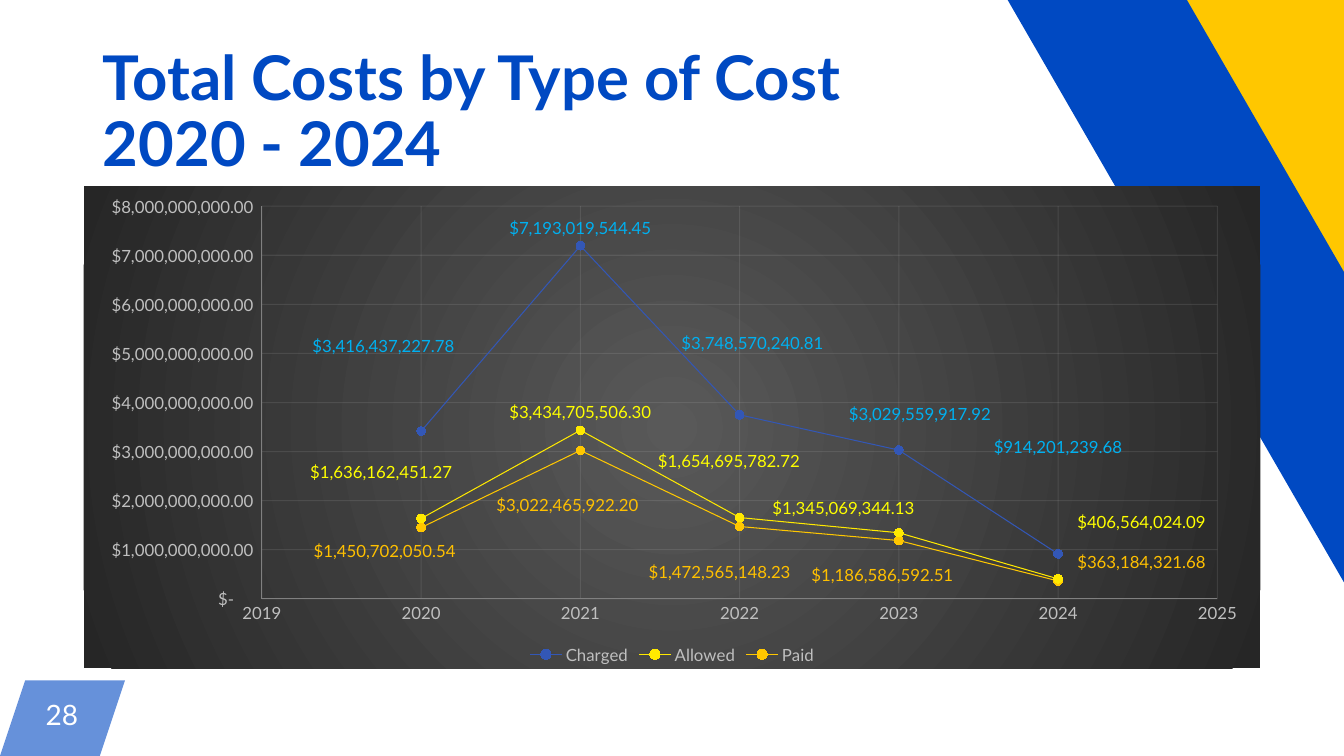
"""Build the slide on total costs by type of cost, 2020 - 2024."""
from lxml.etree import SubElement
from pptx import Presentation
from pptx.chart.data import XyChartData
from pptx.dml.color import RGBColor
from pptx.enum.chart import (XL_CHART_TYPE, XL_LABEL_POSITION, XL_LEGEND_POSITION,
                             XL_MARKER_STYLE, XL_TICK_MARK)
from pptx.enum.shapes import MSO_SHAPE
from pptx.enum.text import MSO_ANCHOR, PP_ALIGN
from pptx.oxml import parse_xml
from pptx.oxml.ns import nsdecls, qn
from pptx.util import Inches, Pt

WIDTH, HEIGHT = 13.33, 7.5
FONT = "Lato"
COLORS = {
    "blue": "0049C2", "yellow": "FFC700", "white": "FFFFFF",
    "axis": "808080", "grid": "F2F2F2", "axis text": "BFBFBF",
    "chart center": "595959", "chart edge": "262626",
    "charged": "3357B6", "charged marker": "2C54BD", "charged label": "00B0F0",
    "allowed": "FFE900", "allowed label": "FFFF00", "paid label": "FFC000",
}
TITLE_LINES = ["Total Costs by Type of Cost", "2020 - 2024"]
PAGE_NUMBER = "28"
MONEY = '_("$"* #,##0.00_);_("$"* \\(#,##0.00\\);_("$"* "-"??_);_(@_)'
YEARS = range(2020, 2025)
# name, line, marker, label, values, label shifts in percent of the chart
SERIES = [
    ("Charged", "charged", "charged marker", "charged label",
     [3416437227.78, 7193019544.45, 3748570240.81, 3029559917.92, 914201239.68],
     [(-3.2, -14), (0, 0), (1.1, -11.3), (1.8, -3.9), (0, -18.4)]),
    ("Allowed", "allowed", "allowed", "allowed label",
     [1636162451.27, 3434705506.30, 1654695782.72, 1345069344.13, 406564024.09],
     [(-3.4, -5.9), (0, 0), (-0.9, -8), (-4.7, -1.4), (7.1, -8)]),
    ("Paid", "yellow", "yellow", "paid label",
     [1450702050.54, 3022465922.20, 1472565148.23, 1186586592.51, 363184321.68],
     [(-3.1, 8.5), (-1.1, 15), (-1.7, 13.1), (-1.4, 10.9), (7.1, -0.3)]),
]
PLOT_AREA = {"x": 15.15, "y": 4.1, "w": 81.2, "h": 81.5}
STRIPES = [("yellow", 12.78, -3.31, 1.97, 330.2), ("blue", 11.82, -1.95, 1.54, 330)]
STRIPE_LENGTH = 9.81
PAGE_TAB = [(0.25, 6.75), (1.24, 6.75), (0.99, HEIGHT), (0, HEIGHT)]


def color(name):
    return RGBColor.from_string(COLORS[name])


def style_font(font, size, color_name, bold=False):
    font.name, font.size, font.bold = FONT, Pt(size), bold
    font.color.rgb = color(color_name)


def style_line(line, color_name):
    line.width = Pt(0.75)
    line.color.rgb = color(color_name)


def style_shape(shape, color_name):
    shape.shadow.inherit = False
    shape.fill.solid()
    shape.fill.fore_color.rgb = color(color_name)
    shape.line.fill.background()


def set_opacity(element, percent):
    for node in element.iter(qn("a:srgbClr")):
        SubElement(node, qn("a:alpha"), val=str(percent * 1000))


def manual_layout(shares, inner=False):
    target = '<c:layoutTarget val="inner"/>' if inner else ""
    modes = '<c:xMode val="edge"/><c:yMode val="edge"/>' if inner else ""
    sizes = "".join(f'<c:{key} val="{share / 100:.4f}"/>' for key, share in shares.items())
    return parse_xml(f'<c:layout {nsdecls("c")}><c:manualLayout>{target}{modes}{sizes}'
                     '</c:manualLayout></c:layout>')


def add_decoration(slide):
    points = [(Inches(x), Inches(y)) for x, y in PAGE_TAB]
    builder = slide.shapes.build_freeform(*points[0])
    builder.add_line_segments(points[1:], close=True)
    tab = builder.convert_to_shape()
    style_shape(tab, "blue")
    set_opacity(tab._element.spPr, 60)
    for color_name, left, top, width, rotation in STRIPES:
        stripe = slide.shapes.add_shape(MSO_SHAPE.RECTANGLE, Inches(left), Inches(top),
                                        Inches(width), Inches(STRIPE_LENGTH))
        stripe.rotation = rotation
        style_shape(stripe, color_name)


def add_title(slide):
    title = slide.shapes.title
    title.left, title.top = Inches(0.92), Inches(0.4)
    title.width, title.height = Inches(11.5), Inches(1.45)
    title.text_frame.vertical_anchor = MSO_ANCHOR.MIDDLE
    title.text_frame.word_wrap = True
    paragraph = title.text_frame.paragraphs[0]
    paragraph.alignment = PP_ALIGN.LEFT
    paragraph.line_spacing = 0.9
    for index, line in enumerate(TITLE_LINES):
        if index:
            paragraph.add_line_break()
        run = paragraph.add_run()
        run.text = line
        style_font(run.font, 44, "blue", True)


def add_page_number(slide):
    box = slide.shapes.add_textbox(Inches(0.25), Inches(6.75), Inches(0.73), Inches(0.75))
    frame = box.text_frame
    frame.word_wrap = True
    frame.vertical_anchor = MSO_ANCHOR.MIDDLE
    frame.margin_left = frame.margin_right = Inches(0.04)
    frame.margin_top = frame.margin_bottom = Inches(0.04)
    paragraph = frame.paragraphs[0]
    paragraph.alignment = PP_ALIGN.CENTER
    paragraph.line_spacing = Pt(17.7)
    run = paragraph.add_run()
    run.text = PAGE_NUMBER
    style_font(run.font, 20, "white")


def style_axis(axis, low, high, step, number_format):
    axis.minimum_scale, axis.maximum_scale, axis.major_unit = low, high, step
    axis.major_tick_mark = axis.minor_tick_mark = XL_TICK_MARK.NONE
    axis.has_major_gridlines = True
    style_line(axis.major_gridlines.format.line, "grid")
    style_line(axis.format.line, "axis")
    style_font(axis.tick_labels.font, 12, "axis text")
    axis.tick_labels.number_format = number_format
    axis.tick_labels.number_format_is_linked = False


def style_series(series, line, marker, label, shifts):
    style_line(series.format.line, line)
    series.marker.style = XL_MARKER_STYLE.CIRCLE
    series.marker.size = 6
    series.marker.format.fill.solid()
    series.marker.format.fill.fore_color.rgb = color(marker)
    style_line(series.marker.format.line, marker)
    for index, (x, y) in enumerate(shifts):
        data_label = series.points[index].data_label
        style_font(data_label.font, 12, label)
        data_label.position = XL_LABEL_POSITION.ABOVE
        idx = data_label._get_or_add_dLbl().find(qn("c:idx"))
        number_format = idx.makeelement(qn("c:numFmt"), formatCode=MONEY, sourceLinked="0")
        idx.addnext(number_format)
        if x or y:
            idx.addnext(manual_layout({"x": x, "y": y}))


def add_cost_chart(slide):
    data = XyChartData(number_format=MONEY)
    for name, _, _, _, values, _ in SERIES:
        series_data = data.add_series(name)
        for year, value in zip(YEARS, values):
            series_data.add_data_point(year, value)
    chart = slide.shapes.add_chart(XL_CHART_TYPE.XY_SCATTER_LINES, Inches(0.83), Inches(1.85),
                                   Inches(11.67), Inches(4.78), data).chart
    chart.has_title = False
    style_font(chart.font, 12, "axis text")
    chart.has_legend = True
    chart.legend.position = XL_LEGEND_POSITION.BOTTOM
    chart.legend.include_in_layout = False
    style_font(chart.legend.font, 12, "axis text")
    style_axis(chart.category_axis, 2019, 2025, 1, "General")
    style_axis(chart.value_axis, 0, 8e9, 1e9, MONEY)
    plot = chart.plots[0]
    plot.vary_by_categories = False
    for series, (_, line, marker, label, _, shifts) in zip(plot.series, SERIES):
        style_series(series, line, marker, label, shifts)

    space = chart._chartSpace
    for leader_lines in space.iter(qn("c:showLeaderLines")):
        leader_lines.set("val", "0")
    for gridlines in space.iter(qn("c:majorGridlines")):
        set_opacity(gridlines, 10)
    plot_area = next(space.iter(qn("c:plotArea")))
    for layout in plot_area.findall(qn("c:layout")):
        plot_area.remove(layout)
    plot_area.insert(0, manual_layout(PLOT_AREA, inner=True))
    stops = "".join(f'<a:gs pos="{position}"><a:srgbClr val="{COLORS[name]}"/></a:gs>'
                    for position, name in [(0, "chart center"), (100000, "chart edge")])
    space.find(qn("c:chart")).addnext(parse_xml(
        f'<c:spPr {nsdecls("c", "a")}><a:gradFill><a:gsLst>{stops}</a:gsLst>'
        '<a:path path="circle"><a:fillToRect l="50000" t="50000" r="50000" b="50000"/></a:path>'
        '</a:gradFill><a:ln><a:noFill/></a:ln></c:spPr>'))


def main():
    presentation = Presentation()
    presentation.slide_width, presentation.slide_height = Inches(WIDTH), Inches(HEIGHT)
    slide = presentation.slides.add_slide(presentation.slide_layouts[5])
    add_decoration(slide)
    add_page_number(slide)
    add_title(slide)
    add_cost_chart(slide)
    presentation.save("out.pptx")


if __name__ == "__main__":
    main()
